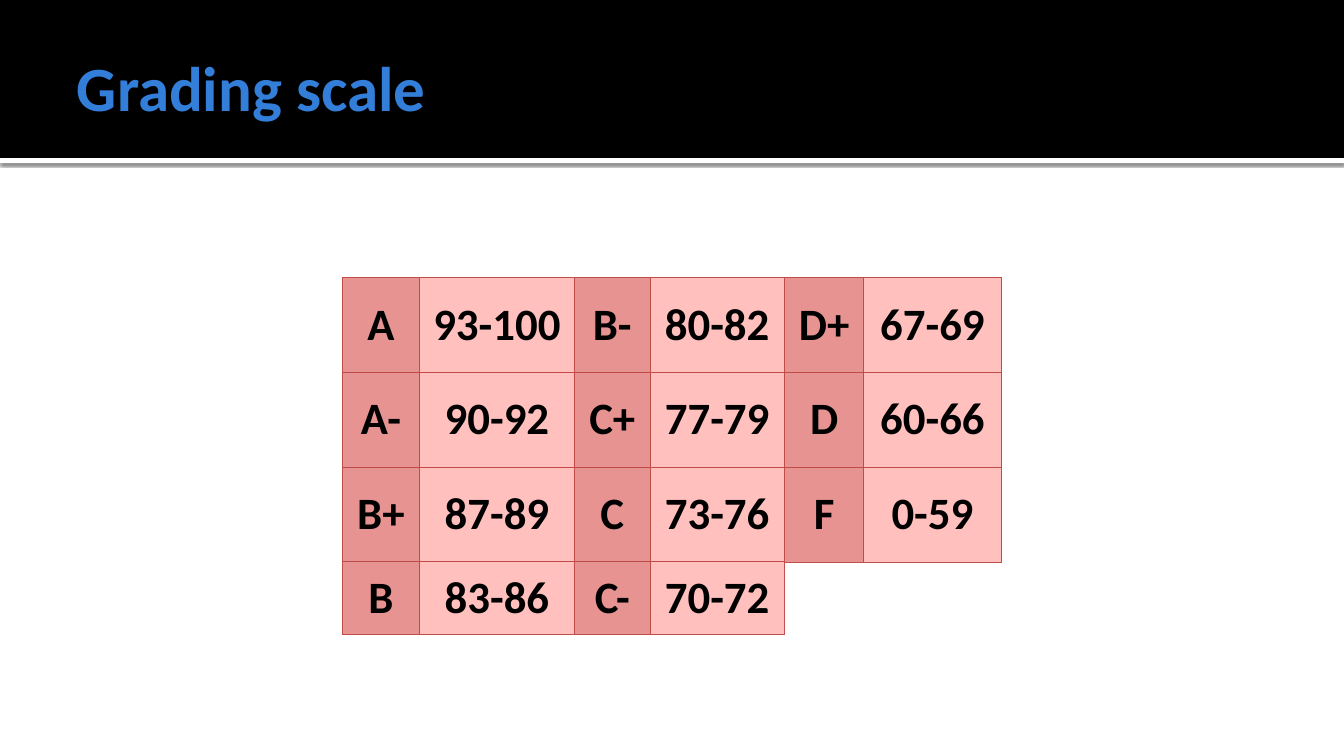
from lxml.etree import SubElement
from pptx import Presentation
from pptx.dml.color import RGBColor
from pptx.enum.shapes import MSO_SHAPE
from pptx.enum.text import MSO_ANCHOR, PP_ALIGN
from pptx.oxml import parse_xml
from pptx.oxml.ns import nsdecls, qn
from pptx.util import Cm, Pt

FONT = "Calibri"
BLACK = RGBColor(0x00, 0x00, 0x00)
WHITE = RGBColor(0xFF, 0xFF, 0xFF)
TITLE_BLUE = RGBColor(0x33, 0x7E, 0xD9)
GRADE_FILL = RGBColor(0xE6, 0x93, 0x91)
RANGE_FILL = RGBColor(0xFF, 0xC0, 0xBE)
GRID_RED = RGBColor(0xBF, 0x4C, 0x48)
EDGE_RED = RGBColor(0xC0, 0x50, 0x4D)

SLIDE_WIDTH = Cm(33.87)
COLUMN_WIDTHS = [1.94, 3.91, 1.9, 3.39, 2, 3.46]
ROW_HEIGHTS = [2.39, 2.39, 2.39, 1.83]
GRADES = [
    ["A", "93-100", "B-", "80-82", "D+", "67-69"],
    ["A-", "90-92", "C+", "77-79", "D", "60-66"],
    ["B+", "87-89", "C", "73-76", "F", "0-59"],
    ["B", "83-86", "C-", "70-72", "", ""],
]


def add_band(slide, top, height, color):
    band = slide.shapes.add_shape(MSO_SHAPE.RECTANGLE, 0, top, SLIDE_WIDTH, height)
    band.fill.solid()
    band.fill.fore_color.rgb = color
    band.line.fill.background()
    band.shadow.inherit = False
    return band


def add_soft_shadow(shape):
    effects = shape._element.spPr.find(qn("a:effectLst"))
    shadow = SubElement(effects, qn("a:outerShdw"), blurRad=str(Pt(2.5)),
                        dist=str(Pt(0.8)), dir="5400000", rotWithShape="0")
    color = SubElement(shadow, qn("a:srgbClr"), val=str(BLACK))
    SubElement(color, qn("a:alpha"), val="60000")


def add_run(paragraph, text, size, color):
    run = paragraph.add_run()
    run.text = text
    run.font.name = FONT
    run.font.size = Pt(size)
    run.font.bold = True
    run.font.color.rgb = color


def add_title(slide, text):
    box = slide.shapes.add_textbox(Cm(1.69), Cm(0.43), Cm(30.48), Cm(3.48))
    frame = box.text_frame
    frame.word_wrap = True
    frame.vertical_anchor = MSO_ANCHOR.MIDDLE
    frame.margin_left = Cm(0.25)
    frame.margin_right = frame.margin_top = frame.margin_bottom = Cm(0.13)
    add_run(frame.paragraphs[0], text, 45, TITLE_BLUE)


def set_borders(cell, borders):
    """Draw the sides in borders, a dict of L, R, T, B to (colour, points) or None."""
    properties = cell._tc.get_or_add_tcPr()
    for position, side in enumerate("LRTB"):
        if borders[side]:
            color, points = borders[side]
            width = Pt(points)
            paint = f'<a:solidFill><a:srgbClr val="{color}"/></a:solidFill>'
        else:
            width, paint = 0, "<a:noFill/>"
        properties.insert(position, parse_xml(
            f'<a:ln{side} {nsdecls("a")} w="{width}">{paint}</a:ln{side}>'))


def cell_borders(row, column):
    """Return a cell's sides; those facing the empty corner are thinner."""
    grid, edge = (GRID_RED, 0.75), (EDGE_RED, 0.5)
    if not GRADES[row][column]:
        return {"L": edge if GRADES[row][column - 1] else None,
                "R": None, "T": edge, "B": None}
    borders = dict.fromkeys("LRTB", grid)
    if row + 1 < len(GRADES) and not GRADES[row + 1][column]:
        borders["B"] = edge
    if column + 1 < len(GRADES[row]) and not GRADES[row][column + 1]:
        borders["R"] = edge
    return borders


def fill_cell(cell, text, color):
    cell.fill.solid()
    cell.fill.fore_color.rgb = color
    cell.vertical_anchor = MSO_ANCHOR.MIDDLE
    cell.margin_left = cell.margin_right = Cm(0.18)
    cell.margin_top = cell.margin_bottom = 0
    if text:
        paragraph = cell.text_frame.paragraphs[0]
        paragraph.alignment = PP_ALIGN.CENTER
        add_run(paragraph, text, 32, BLACK)


def add_grade_table(slide):
    table = slide.shapes.add_table(
        len(ROW_HEIGHTS), len(COLUMN_WIDTHS), Cm(8.63), Cm(6.99),
        Cm(sum(COLUMN_WIDTHS)), Cm(sum(ROW_HEIGHTS))).table
    table.first_row = table.horz_banding = False
    for column, width in zip(table.columns, COLUMN_WIDTHS):
        column.width = Cm(width)
    for row, height in zip(table.rows, ROW_HEIGHTS):
        row.height = Cm(height)
    for row, texts in enumerate(GRADES):
        for column, text in enumerate(texts):
            color = (GRADE_FILL, RANGE_FILL)[column % 2] if text else WHITE
            cell = table.cell(row, column)
            fill_cell(cell, text, color)
            set_borders(cell, cell_borders(row, column))


def main():
    presentation = Presentation()
    presentation.slide_width = SLIDE_WIDTH
    presentation.slide_height = Cm(19.05)
    slide = presentation.slides.add_slide(presentation.slide_layouts[6])
    add_soft_shadow(add_band(slide, Cm(3.98), Cm(0.13), WHITE))
    add_band(slide, 0, Cm(3.98), BLACK)
    add_title(slide, "Grading scale")
    add_grade_table(slide)
    presentation.save("out.pptx")


if __name__ == "__main__":
    main()
